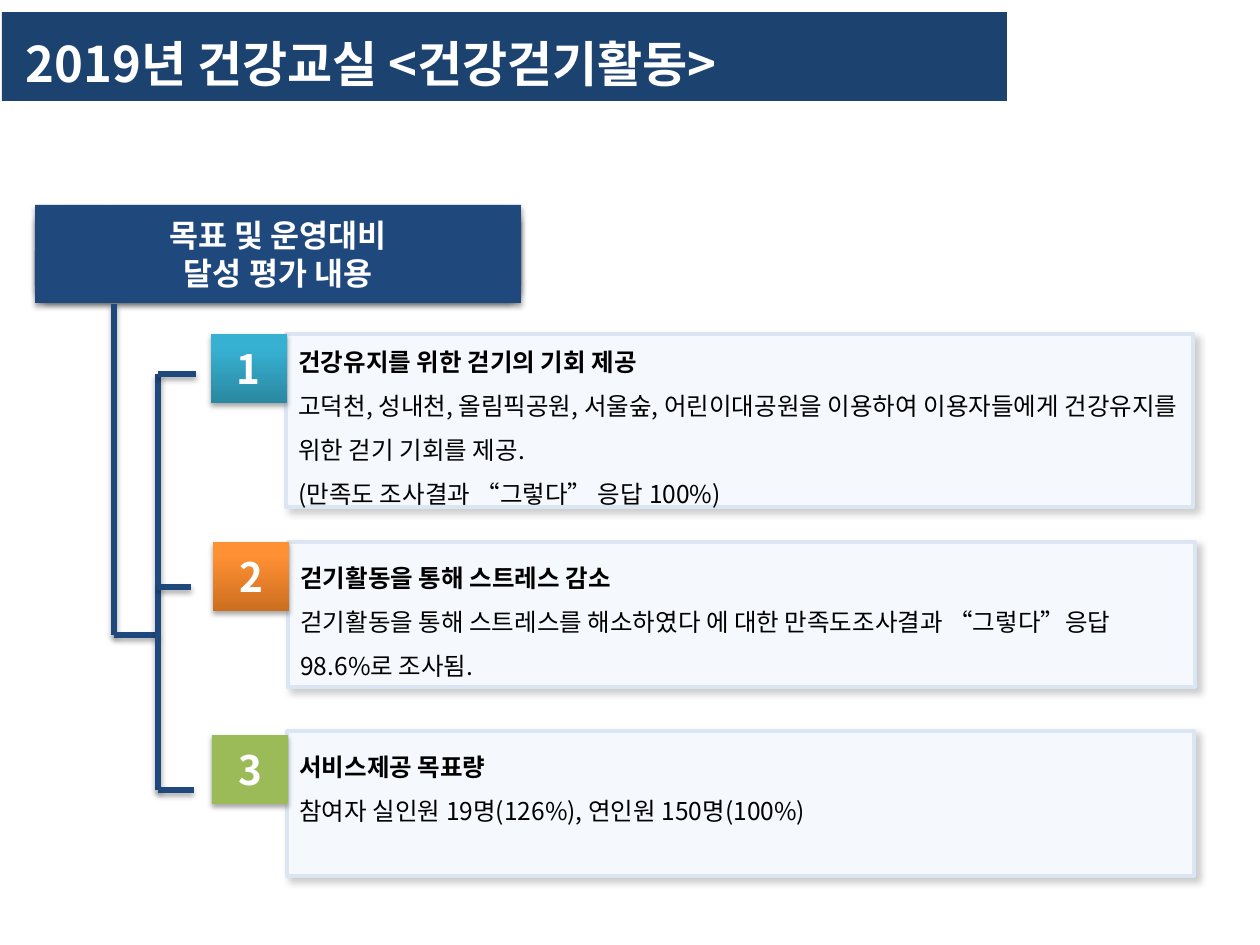
from lxml.etree import SubElement
from pptx import Presentation
from pptx.dml.color import RGBColor
from pptx.enum.shapes import MSO_CONNECTOR, MSO_SHAPE
from pptx.enum.text import MSO_ANCHOR, MSO_AUTO_SIZE, PP_ALIGN
from pptx.oxml.ns import qn
from pptx.util import Emu, Pt

FONT = "Noto Sans CJK KR"
NAVY, WHITE, BLACK = "1F497D", "FFFFFF", "000000"
DARK_SHADOW = (35, 3.1, 1.8, 90)  # opacity %, blur pt, distance pt, angle
SOFT_SHADOW = (20, 4, 3, 45)


def px(n):
    return Emu(round(n * 914400 / 126))


def rgb(color):
    return RGBColor.from_string(color)


def add_shadow(s, opacity, blur, distance, angle):
    effects = SubElement(s._element.spPr, qn("a:effectLst"))
    outer = SubElement(effects, qn("a:outerShdw"), blurRad=str(Pt(blur)),
                       dist=str(Pt(distance)), dir=str(angle * 60000),
                       algn="ctr", rotWithShape="0")
    color = SubElement(outer, qn("a:srgbClr"), val=BLACK)
    SubElement(color, qn("a:alpha"), val=str(opacity * 1000))


def set_fill(s, colors):
    """One colour gives a solid fill, two a gradient from bottom to top."""
    if len(colors) == 1:
        s.fill.solid()
        s.fill.fore_color.rgb = rgb(colors[0])
        return
    s.fill.gradient()
    s.fill.gradient_angle = 90
    for stop, color, position in zip(s.fill.gradient_stops, colors, (0, 0.8)):
        stop.color.rgb = rgb(color)
        stop.position = position


def add_box(slide, x, y, w, h, colors, shadow, line=None, shape=MSO_SHAPE.RECTANGLE):
    s = slide.shapes.add_shape(shape, px(x), px(y), px(w), px(h))
    set_fill(s, colors)
    if line:
        s.line.color.rgb = rgb(line)
        s.line.width = Pt(2)
    else:
        s.line.fill.background()
    add_shadow(s, *shadow)
    return s


def write(s, lines, size, color, align=PP_ALIGN.CENTER, anchor=MSO_ANCHOR.MIDDLE,
          spacing=None):
    """Write (text, bold) lines, one paragraph each."""
    tf = s.text_frame
    tf.word_wrap = True
    tf.vertical_anchor = anchor
    for i, (text, bold) in enumerate(lines):
        p = tf.add_paragraph() if i else tf.paragraphs[0]
        p.text = text
        p.alignment = align
        p.line_spacing = spacing
        p.font.size = Pt(size)
        p.font.bold = bold
        p.font.color.rgb = rgb(color)
        p.font.name = FONT
        SubElement(p.font._element, qn("a:ea"), typeface=FONT)
    return tf


def add_title(slide, x, y, w, h):
    s = slide.shapes.title
    s.left, s.top, s.width, s.height = px(x), px(y), px(w), px(h)
    set_fill(s, ["1C4270"])
    tf = write(s, [("2019년 건강교실 <건강걷기활동>", True)], 28, WHITE, PP_ALIGN.LEFT)
    tf.auto_size = MSO_AUTO_SIZE.NONE
    tf.margin_left, tf.margin_top, tf.margin_bottom = px(24), px(12), 0


def add_header(slide, x, y, w, h):
    add_box(slide, x, y + 2, w, h - 4, [NAVY], DARK_SHADOW,
            shape=MSO_SHAPE.ROUNDED_RECTANGLE)
    s = add_box(slide, x, y, w, h, [NAVY], DARK_SHADOW)
    tf = write(s, [("목표 및 운영대비", True), ("달성 평가 내용", True)], 18, WHITE)
    tf.margin_left = tf.margin_right = px(28)
    tf.margin_top = tf.margin_bottom = 0


def add_item(slide, x, y, h, number, colors, lines, anchor=MSO_ANCHOR.TOP, badge_drop=0):
    panel = add_box(slide, x, y, 907, h, ["F5F9FD"], SOFT_SHADOW, "DCE6F2")
    styled = [(text, i == 0) for i, text in enumerate(lines)]
    write(panel, styled, 14, BLACK, PP_ALIGN.LEFT, anchor, 1.5)
    badge = add_box(slide, x - 75, y + badge_drop, 76, 69, colors, DARK_SHADOW)
    write(badge, [(number, True)], 23.1, WHITE)


def add_line(slide, x1, y1, x2, y2):
    s = slide.shapes.add_connector(MSO_CONNECTOR.STRAIGHT, px(x1), px(y1), px(x2), px(y2))
    s.line.color.rgb = rgb(NAVY)
    s.line.width = Pt(3)
    add_shadow(s, *DARK_SHADOW)


def add_bracket(slide, x, y, w, trunk_h, branches):
    """Trunk from the header, then a spine with one branch per item."""
    spine, foot = x + w, y + trunk_h
    add_line(slide, x, y, x, foot)
    add_line(slide, spine, foot, x, foot)
    add_line(slide, spine, branches[0][1], spine, branches[-1][1])
    for end, branch_y in branches:
        add_line(slide, end, branch_y, spine, branch_y)


def main():
    prs = Presentation()
    prs.slide_width, prs.slide_height = px(1260), px(945)
    slide = prs.slides.add_slide(prs.slide_layouts[5])

    add_title(slide, 2, 12, 1005, 89)
    add_header(slide, 35, 205, 486, 98)
    add_bracket(slide, 114, 304, 44, 331, [(196, 374), (191, 587), (194, 790)])

    # Numbered results
    add_item(slide, 286, 334, 173, "1", ["2A88A2", "37B1D2"], [
        "건강유지를 위한 걷기의 기회 제공",
        "고덕천, 성내천, 올림픽공원, 서울숲, 어린이대공원을 이용하여 이용자들에게 "
        "건강유지를 위한 걷기 기회를 제공.",
        "(만족도 조사결과 “그렇다” 응답 100%)"], MSO_ANCHOR.MIDDLE)
    add_item(slide, 288, 542, 145, "2", ["CC6E20", "FF9034"], [
        "걷기활동을 통해 스트레스 감소",
        "걷기활동을 통해 스트레스를 해소하였다 에 대한 만족도조사결과 "
        "“그렇다”응답 98.6%로 조사됨."])
    add_item(slide, 287, 731, 145, "3", ["9BBB59"], [
        "서비스제공 목표량",
        "참여자 실인원 19명(126%), 연인원 150명(100%)"], badge_drop=4)

    prs.save("out.pptx")


if __name__ == "__main__":
    main()
